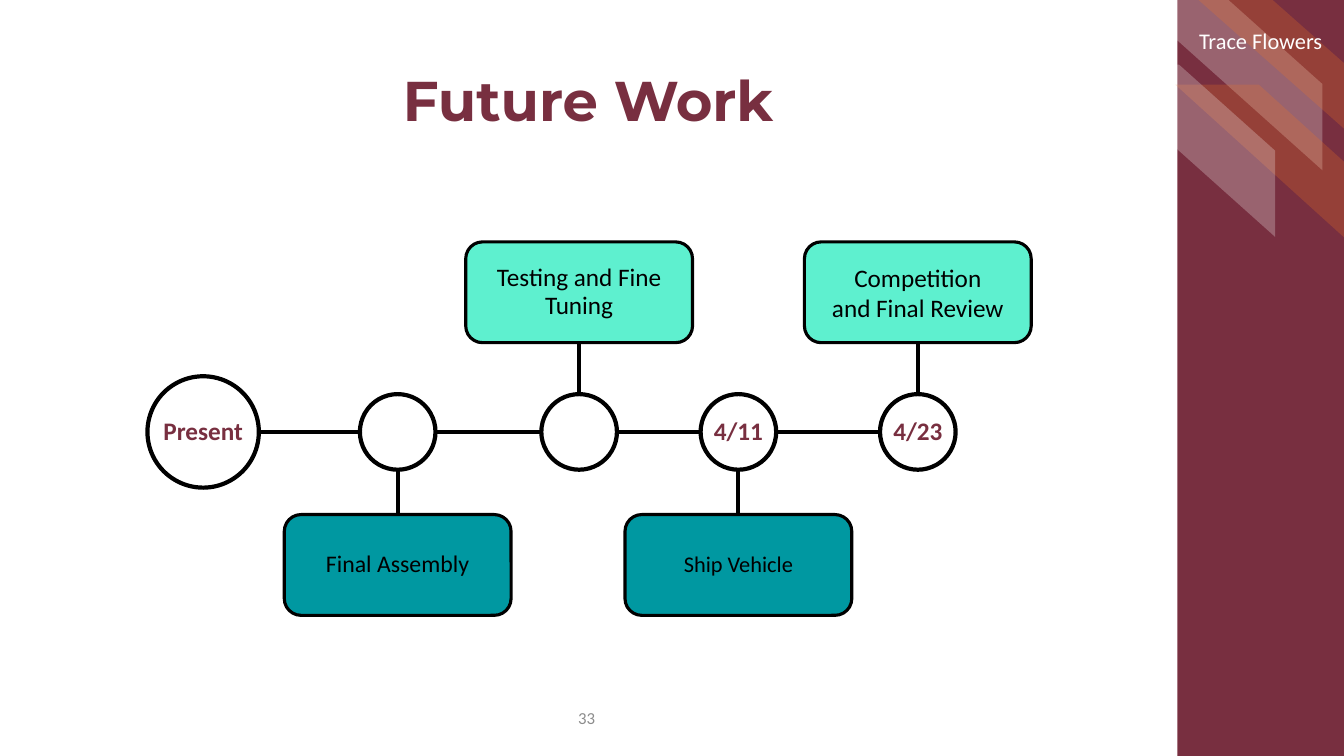
from dataclasses import dataclass

from lxml import etree
from pptx import Presentation
from pptx.dml.color import RGBColor
from pptx.enum.shapes import MSO_CONNECTOR, MSO_SHAPE
from pptx.enum.text import MSO_ANCHOR, PP_ALIGN
from pptx.oxml.ns import qn
from pptx.util import Inches, Pt

STRAIGHT = MSO_CONNECTOR.STRAIGHT
RECTANGLE, ROUNDED = MSO_SHAPE.RECTANGLE, MSO_SHAPE.ROUNDED_RECTANGLE
STRIPE, NODE = MSO_SHAPE.DIAGONAL_STRIPE, MSO_SHAPE.FLOWCHART_CONNECTOR
CENTER, MIDDLE, TOP = PP_ALIGN.CENTER, MSO_ANCHOR.MIDDLE, MSO_ANCHOR.TOP

CELL = 0.25  # inches per grid column and row
COLUMNS, ROWS = 53.33, 30
GARNET, ORANGE, WHITE, BLACK = "782F40", "EE7624", "FFFFFF", "000000"
MINT, TEAL, GRAY = "5EF0CF", "0098A1", "8C8C8C"

AXIS_ROW = 7.58
CARD_WIDTH, CARD_HEIGHT = 9, 4
ABOVE, BELOW = 0.04, 10.86
# centre column, diameter, label
MILESTONES = [
    (2.22, 4.42, "Present"),
    (9.94, 3, ""),
    (17.14, 3, ""),
    (23.46, 3, "4/11"),
    (30.58, 3, "4/23"),
]
# milestone index, card row, fill, text size, line spacing, lines
CARDS = [
    (1, BELOW, TEAL, 17, 0.9, ["Final Assembly"]),
    (2, ABOVE, MINT, 18, 0.9, ["Testing and Fine Tuning"]),
    (3, BELOW, TEAL, 16, 0.9, ["Ship Vehicle"]),
    (4, ABOVE, MINT, 18, 1.0, ["Competition", "and Final Review"]),
]
# left, top, width, height, colour, adjustment
STRIPES = [
    (-1.88, -0.08, 7.64, 6.84, WHITE, 0.5),
    (-0.08, 3.36, 6.76, 6.12, ORANGE, 0.51),
    (-3.76, 2.56, 7.64, 6.84, WHITE, 0.5),
    (0.84, 0, 5.88, 5.2, ORANGE, 0.5),
]


@dataclass
class Box:
    """A region in grid columns and rows."""
    left: float
    top: float
    width: float
    height: float

    def inner(self, left, top, width, height):
        return Box(self.left + left, self.top + top, width, height)

    def emu(self):
        return [Inches(n * CELL) for n in (self.left, self.top, self.width, self.height)]


def color(hex_string):
    return RGBColor.from_string(hex_string)


def add_shape(slide, kind, box, fill, line_width=0):
    shape = slide.shapes.add_shape(kind, *box.emu())
    shape.shadow.inherit = False
    shape.fill.solid()
    shape.fill.fore_color.rgb = color(fill)
    if line_width:
        shape.line.color.rgb = color(BLACK)
        shape.line.width = Pt(line_width)
    else:
        shape.line.fill.background()
    return shape


def add_line(slide, box, start, end):
    """Join two (column, row) points of the box."""
    points = [Inches(n * CELL) for x, y in (start, end) for n in (box.left + x, box.top + y)]
    line = slide.shapes.add_connector(STRAIGHT, *points)
    line.line.color.rgb = color(BLACK)
    line.line.width = Pt(3)
    etree.SubElement(line._element.spPr, qn("a:effectLst"))


def write(shape, lines, size, text_color, font="Calibri", bold=False, spacing=1.0, anchor=MIDDLE):
    frame = shape.text_frame
    frame.word_wrap = True
    frame.vertical_anchor = anchor
    for index, text in enumerate(lines):
        paragraph = frame.add_paragraph() if index else frame.paragraphs[0]
        paragraph.alignment = CENTER
        paragraph.line_spacing = spacing
        run = paragraph.add_run()
        run.text = text
        run.font.name = font
        run.font.size = Pt(size)
        run.font.bold = bold
        run.font.color.rgb = color(text_color)


def add_text(slide, box, text, size, text_color, **style):
    shape = slide.shapes.add_textbox(*box.emu())
    write(shape, [text], size, text_color, **style)
    return shape


def add_sidebar(slide, box):
    add_shape(slide, RECTANGLE, box, GARNET)
    for left, top, width, height, fill, adjustment in STRIPES:
        stripe = add_shape(slide, STRIPE, box.inner(left, top, width, height), fill)
        stripe.adjustments[0] = adjustment
        properties = stripe._element.spPr
        properties.get_or_add_xfrm().set("flipH", "1")
        fill_color = properties.find(qn("a:solidFill"))[0]
        etree.SubElement(fill_color, qn("a:alpha")).set("val", "25000")
    add_text(slide, box.inner(0, 0, box.width, 3.32), "Trace Flowers", 16, WHITE, spacing=0.9)


def add_heading(slide, box):
    title = add_text(slide, box, "Future Work", 40, GARNET,
                     font="Montserrat", bold=True, spacing=0.9)
    frame = title.text_frame
    frame.margin_left = frame.margin_right = frame.margin_top = frame.margin_bottom = 0


def add_timeline(slide, box):
    for (x, size, _), (next_x, next_size, _) in zip(MILESTONES, MILESTONES[1:]):
        add_line(slide, box, (x + size / 2, AXIS_ROW), (next_x - next_size / 2, AXIS_ROW))

    for index, row, fill, text_size, spacing, lines in CARDS:
        x, size, _ = MILESTONES[index]
        if row < AXIS_ROW:
            start, end = AXIS_ROW - size / 2, row + CARD_HEIGHT
        else:
            start, end = AXIS_ROW + size / 2, row
        add_line(slide, box, (x, start), (x, end))
        place = box.inner(x - CARD_WIDTH / 2, row, CARD_WIDTH, CARD_HEIGHT)
        card = add_shape(slide, ROUNDED, place, fill, 2.25)
        write(card, lines, text_size, BLACK, spacing=spacing)

    for x, size, label in MILESTONES:
        left = x - size / 2
        add_shape(slide, NODE, box.inner(left, AXIS_ROW - size / 2, size, size), WHITE, 3)
        if label:
            add_text(slide, box.inner(left, AXIS_ROW - 0.84, size, 1.6), label, 18, GARNET,
                     bold=True, anchor=TOP)


def main():
    presentation = Presentation()
    presentation.slide_width = Inches(COLUMNS * CELL)
    presentation.slide_height = Inches(ROWS * CELL)
    slide = presentation.slides.add_slide(presentation.slide_layouts[6])
    add_sidebar(slide, Box(46.72, 0, COLUMNS - 46.72, ROWS))
    add_heading(slide, Box(2, 2, 42.68, 4.2))
    add_timeline(slide, Box(5.84, 9.56, 35.08, 14.86))
    add_text(slide, Box(21.68, 27.88, 3.2, 1.2), "33", 12, GRAY)
    presentation.save("out.pptx")


if __name__ == "__main__":
    main()
